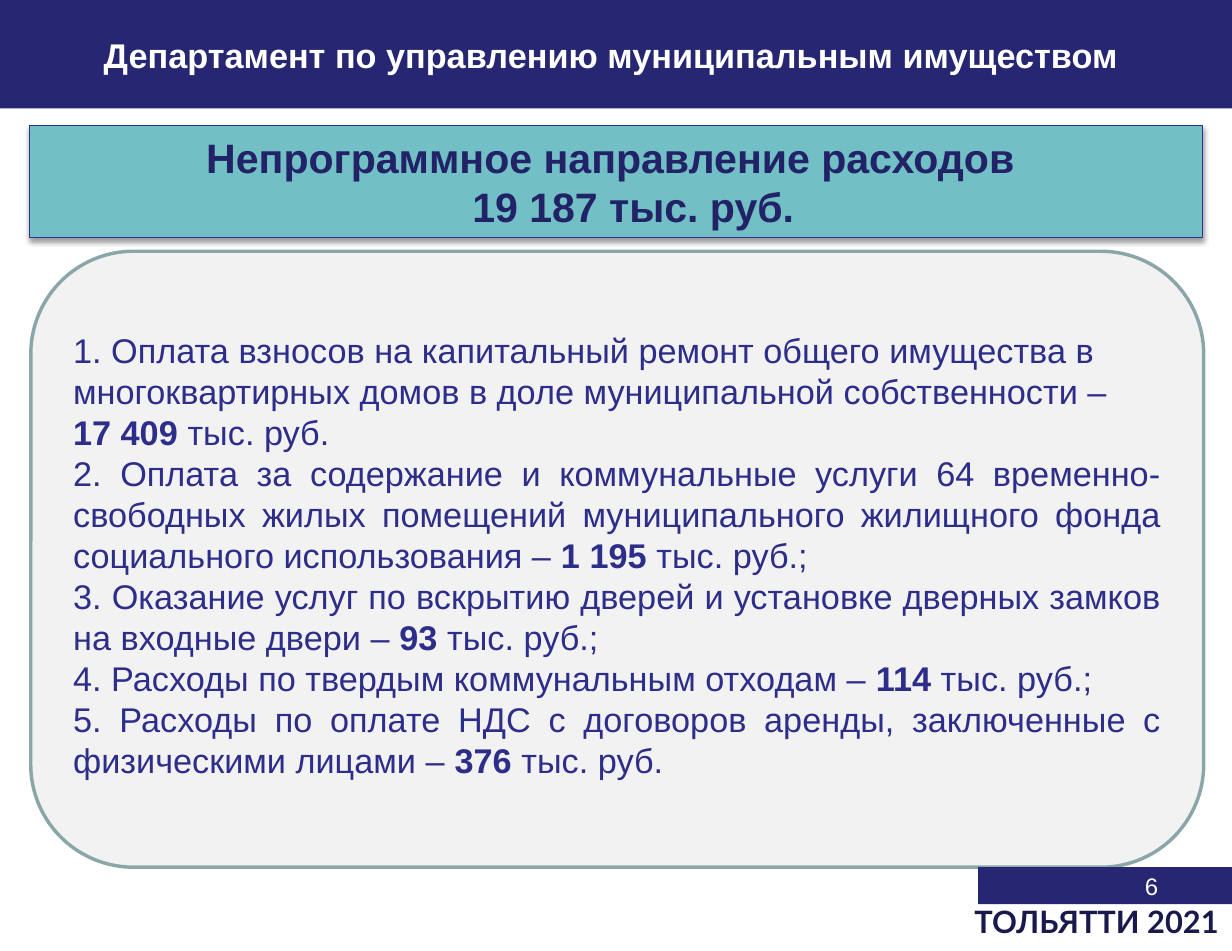
from dataclasses import dataclass

from lxml import etree
from pptx import Presentation
from pptx.dml.color import RGBColor
from pptx.enum import shapes, text
from pptx.oxml import parse_xml
from pptx.oxml.ns import nsdecls, qn
from pptx.util import Inches, Pt

COLORS = {
    "navy": "262673",
    "white": "FFFFFF",
    "teal": "72BFC5",
    "banner_line": "2F2F98",
    "banner_text": "222267",
    "panel": "F2F2F2",
    "panel_line": "8AA6A8",
    "body_text": "2D2D8A",
    "city": "19194D",
}


@dataclass
class Expense:
    purpose: str
    amount: str
    ending: str = "тыс. руб.;"
    align: text.PP_ALIGN = text.PP_ALIGN.JUSTIFY


EXPENSES = [
    Expense("1. Оплата взносов на капитальный ремонт общего имущества в "
            "многоквартирных домов в доле муниципальной собственности –\v",
            "17 409", "тыс. руб.", text.PP_ALIGN.LEFT),
    Expense("2. Оплата за содержание и коммунальные услуги 64 временно-свободных "
            "жилых помещений муниципального жилищного фонда социального "
            "использования – ", "1 195"),
    Expense("3. Оказание услуг по вскрытию дверей и установке дверных замков "
            "на входные двери – ", "93"),
    Expense("4. Расходы по твердым коммунальным отходам – ", "114"),
    Expense("5. Расходы по оплате НДС с договоров аренды, заключенные с "
            "физическими лицами – ", "376", "тыс. руб."),
]


def rgb(name: str) -> RGBColor:
    return RGBColor.from_string(COLORS[name])


def place(shape, left: float, top: float, width: float, height: float) -> None:
    shape.left, shape.top = Inches(left), Inches(top)
    shape.width, shape.height = Inches(width), Inches(height)


def paint(shape, fill: str, line: str = "", width: float = 0) -> None:
    shape.fill.solid()
    shape.fill.fore_color.rgb = rgb(fill)
    if line:
        shape.line.color.rgb = rgb(line)
        shape.line.width = Pt(width)
    else:
        shape.line.fill.background()


def add_rectangle(slide, box: tuple, fill: str, line: str = "", width: float = 0):
    rectangle = slide.shapes.add_shape(shapes.MSO_SHAPE.RECTANGLE, *map(Inches, box))
    rectangle.shadow.inherit = False
    paint(rectangle, fill, line, width)
    return rectangle


def style(run, size: float, color: str, bold: bool = False, font: str = "Arial") -> None:
    run.font.name, run.font.size, run.font.bold = font, Pt(size), bold
    run.font.color.rgb = rgb(color)


def add_label(slide, box: tuple, words: str, align, size: float, color: str,
              bold: bool = False, font: str = "Arial"):
    label = slide.shapes.add_textbox(*map(Inches, box)).text_frame
    label.word_wrap = True
    label.text = words
    label.paragraphs[0].alignment = align
    style(label.paragraphs[0].runs[0], size, color, bold, font)
    return label


deck = Presentation()
deck.slide_width, deck.slide_height = Inches(10), Inches(7.72)
slide = deck.slides.add_slide(deck.slide_layouts[1])
department, expenses = slide.placeholders

# Header band
place(department, 0, 0, 10, 0.88)
paint(department, "navy")
header = department.text_frame
header.text = "Департамент по управлению муниципальным имуществом"
header.auto_size = text.MSO_AUTO_SIZE.NONE
header.vertical_anchor = text.MSO_ANCHOR.MIDDLE
header.margin_left, header.margin_right = Inches(0.1), Inches(0.18)
header.margin_top, header.margin_bottom = Inches(0.12), Inches(0.05)
header.paragraphs[0].alignment = text.PP_ALIGN.CENTER
header.paragraphs[0].line_spacing = 0.8
style(header.paragraphs[0].runs[0], 20, "white", True)

# Rounded panel with the list of expenses
place(expenses, 0.25, 2.04, 9.52, 5)
expenses._element.spPr.append(
    parse_xml(f'<a:prstGeom {nsdecls("a")} prst="roundRect"><a:avLst/></a:prstGeom>'))
paint(expenses, "panel", "panel_line", 2)
listing = expenses.text_frame
listing.word_wrap = True
listing.auto_size = text.MSO_AUTO_SIZE.NONE
listing.vertical_anchor = text.MSO_ANCHOR.MIDDLE
listing.margin_bottom = Inches(0.12)
for number, expense in enumerate(EXPENSES):
    item = listing.add_paragraph() if number else listing.paragraphs[0]
    item.text = expense.purpose
    amount = item.add_run()
    amount.text = expense.amount + " "
    item.add_run().text = expense.ending
    item.alignment = expense.align
    item.space_before = Pt(0)
    properties = item._p.get_or_add_pPr()
    properties.set("marL", "0")
    properties.set("indent", "0")
    etree.SubElement(properties, qn("a:buNone"))
    for run in item.runs:
        style(run, 20, "body_text")
    amount.font.bold = True

# Banner with the total
banner = add_rectangle(slide, (0.24, 1.02, 9.52, 0.91), "teal", "banner_line", 0.75)
banner._element.spPr.find(qn("a:effectLst")).append(parse_xml(
    f'<a:outerShdw {nsdecls("a")} blurRad="{Pt(3.1)}" dist="{Pt(1.6)}" dir="5400000" '
    'rotWithShape="0"><a:srgbClr val="000000"><a:alpha val="38000"/></a:srgbClr>'
    '</a:outerShdw>'))
banner.text_frame.text = "Непрограммное направление расходов \n19 187 тыс. руб."
for line in banner.text_frame.paragraphs:
    line.alignment = text.PP_ALIGN.CENTER
    style(line.runs[0], 24, "banner_text", True)
total = banner.text_frame.paragraphs[1]
total._p.get_or_add_pPr().set("marL", str(Inches(0.28)))

# Footer: page number and city
add_rectangle(slide, (7.94, 7.04, 2.06, 0.3), "navy")
add_label(slide, (7.17, 7.03, 2.33, 0.54), "6", text.PP_ALIGN.RIGHT, 14, "white")
city = add_label(slide, (7.81, 7.34, 2.21, 0.35), "ТОЛЬЯТТИ 2021",
                 text.PP_ALIGN.LEFT, 18, "city", True, "Lato")
city.margin_right = 0
city.paragraphs[0].line_spacing = 0.8

deck.save("out.pptx")
